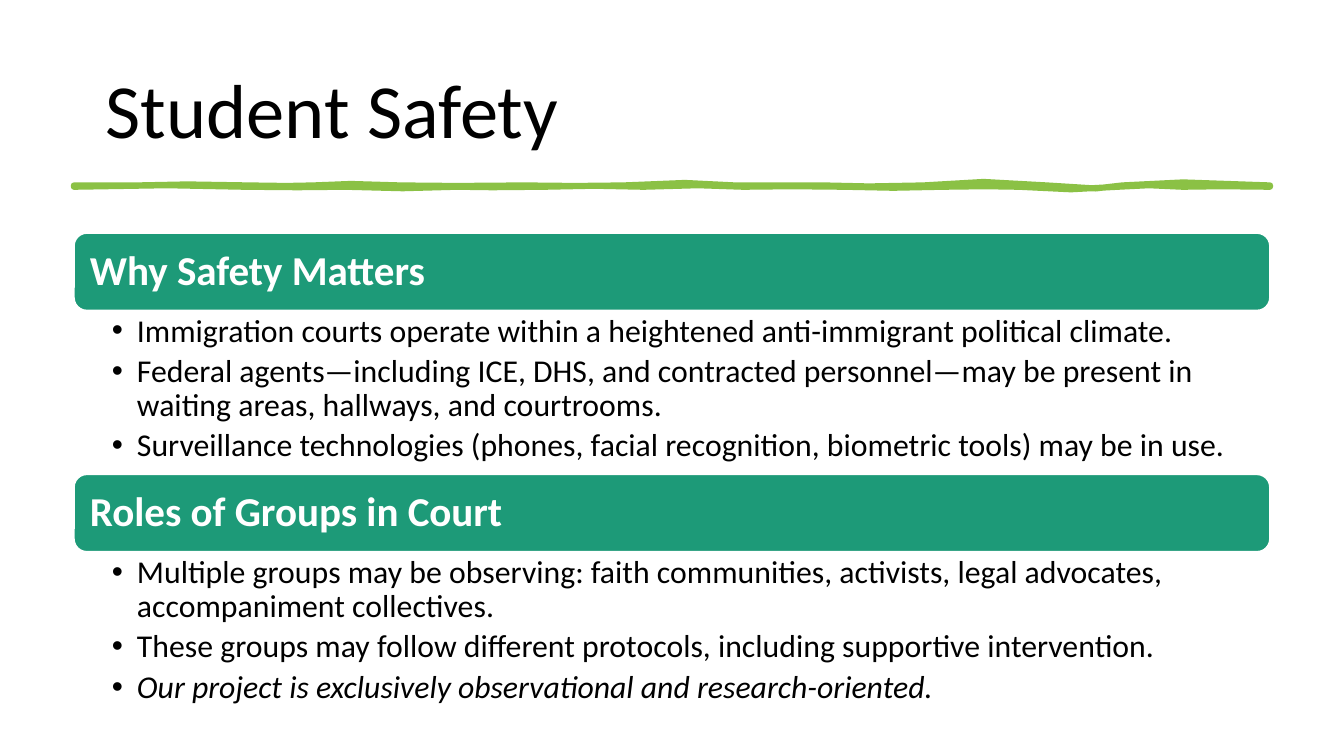
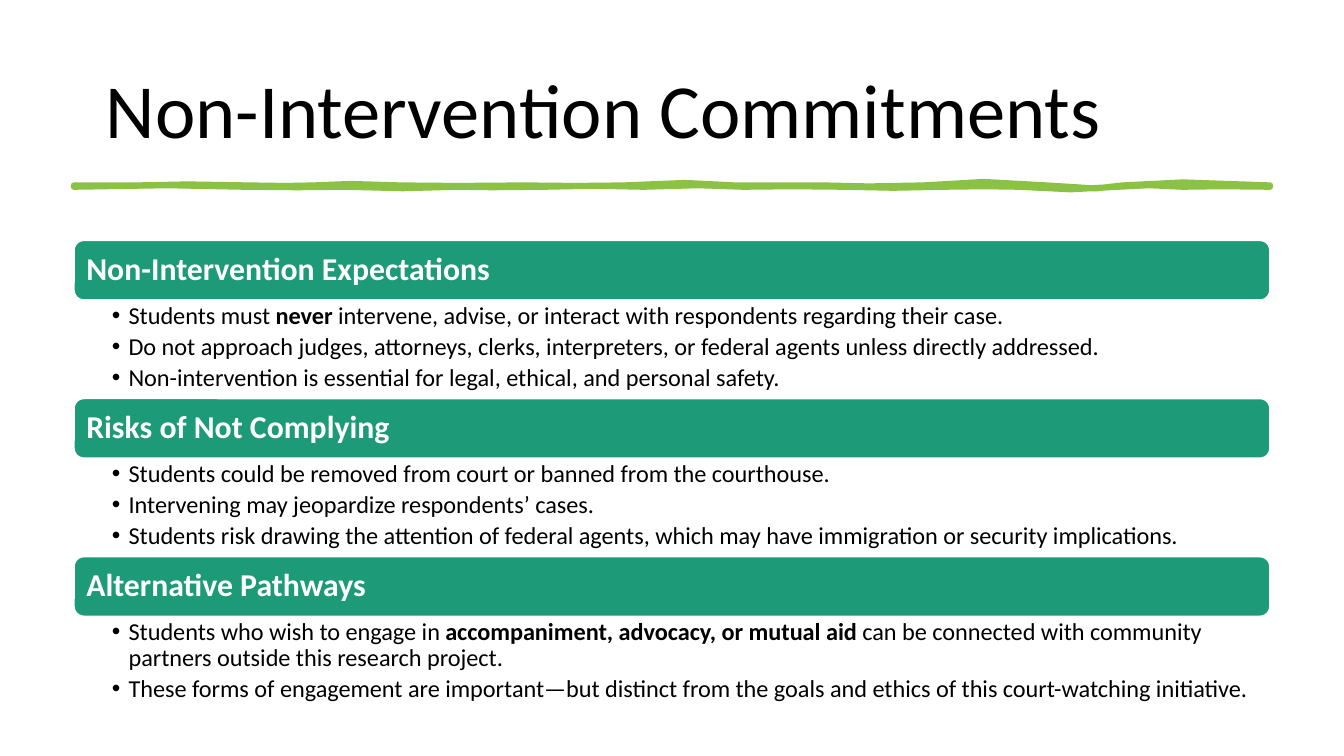
from lxml.etree import SubElement
from pptx import Presentation
from pptx.dml.color import RGBColor
from pptx.enum.shapes import MSO_SHAPE
from pptx.enum.text import MSO_ANCHOR, PP_ALIGN
from pptx.oxml.ns import qn
from pptx.util import Pt

BLACK = RGBColor(0x00, 0x00, 0x00)
WHITE = RGBColor(0xFF, 0xFF, 0xFF)
GREEN = RGBColor(0x1D, 0x9A, 0x78)
LIME = RGBColor(0x8B, 0xC1, 0x45)
FONT = "Calibri"
LEFT, WIDTH = 39.6, 640.8

RIBBON_UNIT = Pt(0.72)
RIBBON_START = (55, 138)
RIBBON_CURVES = [
    (65, 139, 86, 137, 102, 138), (118, 138, 158, 136, 185, 138),
    (213, 139, 216, 138, 233, 138), (250, 137, 269, 136, 298, 138),
    (327, 139, 350, 138, 390, 138), (430, 137, 427, 140, 464, 138),
    (501, 135, 521, 136, 547, 138), (574, 139, 586, 137, 613, 138),
    (639, 138, 652, 140, 687, 138), (722, 135, 741, 134, 779, 138),
    (817, 142, 819, 140, 835, 138), (851, 135, 903, 135, 945, 138),
    (945, 138, 945, 139, 945, 139), (920, 137, 895, 140, 880, 139),
    (865, 138, 844, 137, 832, 139), (821, 141, 774, 142, 758, 139),
    (742, 136, 726, 141, 702, 139), (677, 137, 652, 143, 628, 139),
    (603, 135, 574, 142, 553, 139), (533, 137, 508, 138, 479, 139),
    (450, 140, 435, 136, 405, 139), (375, 142, 353, 137, 340, 139),
    (326, 141, 274, 140, 257, 139), (239, 138, 205, 141, 182, 139),
    (160, 137, 92, 138, 55, 139),
]

SAFETY = [
    ("Why Safety Matters", [
        [("Immigration courts operate within a heightened anti-immigrant political climate.", "")],
        [("Federal agents—including ICE, DHS, and contracted personnel—may be present in "
          "waiting areas, hallways, and courtrooms.", "")],
        [("Surveillance technologies (phones, facial recognition, biometric tools) may be in use.", "")],
    ]),
    ("Roles of Groups in Court", [
        [("Multiple groups may be observing: faith communities, activists, legal advocates, "
          "accompaniment collectives.", "")],
        [("These groups may follow different protocols, including supportive intervention.", "")],
        [("Our project is exclusively observational and research-oriented.", "italic")],
    ]),
]
COMMITMENTS = [
    ("Non-Intervention Expectations", [
        [("Students must ", ""), ("never", "bold"),
         (" intervene, advise, or interact with respondents regarding their case.", "")],
        [("Do not approach judges, attorneys, clerks, interpreters, or federal agents "
          "unless directly addressed.", "")],
        [("Non-intervention is essential for legal, ethical, and personal safety.", "")],
    ]),
    ("Risks of Not Complying", [
        [("Students could be removed from court or banned from the courthouse.", "")],
        [("Intervening may jeopardize respondents’ cases.", "")],
        [("Students risk drawing the attention of federal agents, which may have immigration "
          "or security implications.", "")],
    ]),
    ("Alternative Pathways", [
        [("Students who wish to engage in ", ""), ("accompaniment, advocacy, or mutual aid", "bold"),
         (" can be connected with community partners outside this research project.", "")],
        [("These forms of engagement are important—but distinct from the goals and ethics "
          "of this court-watching initiative.", "")],
    ]),
]


def curve_points(start, curves):
    """Return the middle and end point of each curve in a chain."""
    points = []
    for curve in curves:
        handles = [start, curve[:2], curve[2:4], curve[4:]]
        middle = tuple((a + 3 * b + 3 * c + d) / 8 for a, b, c, d in zip(*handles))
        start = curve[4:]
        points += [middle, start]
    return points


class DeckWriter:
    """Writes titled slides of headed bullet lists in one style."""

    def __init__(self):
        self.deck = Presentation()
        self.deck.slide_width, self.deck.slide_height = Pt(720), Pt(405)
        self.page = None

    def start_page(self, title):
        """Add a slide with its title and ribbon."""
        self.page = self.deck.slides.add_slide(self.deck.slide_layouts[6])
        box = self.page.shapes.add_textbox(Pt(49.6), Pt(21.6), Pt(621), Pt(78.4))
        self.set_frame(box.text_frame, MSO_ANCHOR.MIDDLE, (7.2, 3.6, 7.2, 3.6))
        self.set_paragraph(box.text_frame.paragraphs[0], [(title, "")], 41, BLACK)
        self.add_ribbon()

    def set_frame(self, frame, anchor, margins):
        """Set wrapping, anchor and the left, top, right and bottom margins."""
        frame.word_wrap = True
        frame.vertical_anchor = anchor
        (frame.margin_left, frame.margin_top,
         frame.margin_right, frame.margin_bottom) = map(Pt, margins)

    def set_paragraph(self, para, spans, size, color, bold=False):
        """Fill a paragraph with spans in the shared type style."""
        para.alignment = PP_ALIGN.LEFT
        para.line_spacing = 0.9
        para.font.name, para.font.size, para.font.bold = FONT, Pt(size), bold
        para.font.color.rgb = color
        for text, emphasis in spans:
            span = para.add_run()
            span.text = text
            if emphasis:
                setattr(span.font, emphasis, True)

    def add_ribbon(self):
        """Draw the wavy rule under the title."""
        fine = 72
        builder = self.page.shapes.build_freeform(
            *(value * fine for value in RIBBON_START), scale=RIBBON_UNIT / fine)
        builder.add_line_segments(
            [(x * fine, y * fine) for x, y in curve_points(RIBBON_START, RIBBON_CURVES)])
        ribbon = builder.convert_to_shape()
        ribbon.shadow.inherit = False
        ribbon.fill.solid()
        ribbon.fill.fore_color.rgb = LIME
        ribbon.line.color.rgb = LIME
        ribbon.line.width = Pt(3.25)

    def add_header(self, text, top, height, size):
        """Add a rounded green section header."""
        bar = self.page.shapes.add_shape(
            MSO_SHAPE.ROUNDED_RECTANGLE, Pt(LEFT), Pt(top), Pt(WIDTH), Pt(height))
        bar.shadow.inherit = False
        bar.fill.solid()
        bar.fill.fore_color.rgb = GREEN
        bar.line.color.rgb = WHITE
        bar.line.width = Pt(1)
        self.set_frame(bar.text_frame, MSO_ANCHOR.MIDDLE, [size * 0.3] * 4)
        self.set_paragraph(bar.text_frame.paragraphs[0], [(text, "")], size, WHITE, bold=True)

    def add_bullets(self, points, top, height, size, indent):
        """Add a bulleted list below a header."""
        box = self.page.shapes.add_textbox(Pt(LEFT), Pt(top), Pt(WIDTH), Pt(height))
        frame = box.text_frame
        self.set_frame(frame, MSO_ANCHOR.TOP, (20.3, size * 0.13, size * 0.71, size * 0.13))
        for number, spans in enumerate(points):
            para = frame.add_paragraph() if number else frame.paragraphs[0]
            properties = para._p.get_or_add_pPr()
            properties.set("marL", str(Pt(indent)))
            properties.set("indent", str(-Pt(indent)))
            SubElement(properties, qn("a:buFont"), typeface="Arial")
            SubElement(properties, qn("a:buChar"), char="•")
            para.space_after = Pt(size * 0.19)
            self.set_paragraph(para, spans, size, BLACK)

    def add_sections(self, sections, top, list_height, header_size, size, indent):
        """Stack headers and their lists down the slide."""
        header_height = header_size * 1.89
        for header, points in sections:
            self.add_header(header, top, header_height, header_size)
            self.add_bullets(points, top + header_height, list_height, size, indent)
            top += header_height + list_height


def main():
    """Build and save the deck."""
    writer = DeckWriter()
    writer.start_page("Student Safety")
    writer.add_sections(SAFETY, 124.8, 87.7, header_size=22, size=17, indent=13.5)
    writer.start_page("Non-Intervention Commitments")
    writer.add_sections(COMMITMENTS, 128.7, 52.6, header_size=17, size=13, indent=9)
    writer.deck.save("out.pptx")


if __name__ == "__main__":
    main()
